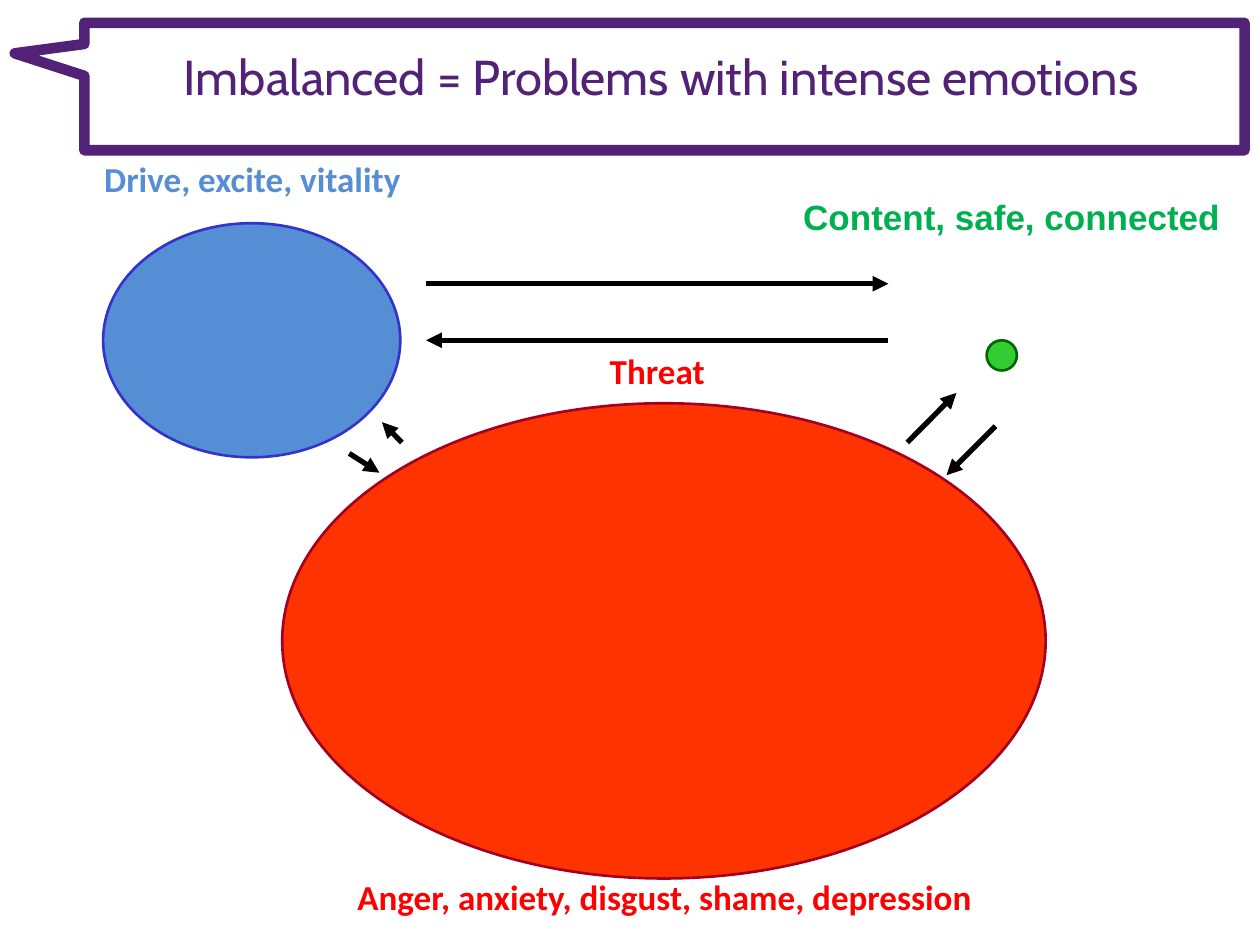
from lxml.etree import SubElement
from pptx import Presentation
from pptx.dml.color import RGBColor
from pptx.enum.shapes import MSO_CONNECTOR, MSO_SHAPE
from pptx.enum.text import MSO_ANCHOR, PP_ALIGN
from pptx.oxml.ns import qn
from pptx.util import Cm, Pt

PURPLE = RGBColor(0x51, 0x22, 0x75)
RED = RGBColor(0xFF, 0x00, 0x00)
RED_FILL = RGBColor(0xFF, 0x33, 0x00)
DARK_RED = RGBColor(0xA5, 0x00, 0x21)
BLUE = RGBColor(0x55, 0x8E, 0xD5)
DARK_BLUE = RGBColor(0x33, 0x33, 0xCC)
GREEN = RGBColor(0x00, 0xB0, 0x50)
GREEN_FILL = RGBColor(0x33, 0xCC, 0x33)
DARK_GREEN = RGBColor(0x00, 0x66, 0x00)
WHITE = RGBColor(0xFF, 0xFF, 0xFF)
BLACK = RGBColor(0x00, 0x00, 0x00)

prs = Presentation()
prs.slide_width, prs.slide_height = Cm(25.4), Cm(19.05)
s = prs.slides.add_slide(prs.slide_layouts[6])


def add_text(text, x, y, w, h, font, size, color, bold=False):
    sp = s.shapes.add_textbox(Cm(x), Cm(y), Cm(w), Cm(h))
    tf = sp.text_frame
    tf.word_wrap = True
    tf.text = text
    p = tf.paragraphs[0]
    p.alignment = PP_ALIGN.CENTER
    r = p.runs[0]
    r.font.name, r.font.size, r.font.bold = font, Pt(size), bold
    r.font.color.rgb = color
    return sp


# Title
title = add_text("Imbalanced = Problems with intense emotions",
                 1.5, -0.05, 23.65, 3.18, "Cabin", 28, PURPLE)
title.text_frame.vertical_anchor = MSO_ANCHOR.MIDDLE

# Labels of the three systems
for text, x, y, w, font, color in [
    ("Anger, anxiety, disgust, shame, depression", 6.2, 17.53, 14.4, "Calibri", RED),
    ("Drive, excite, vitality", 1.09, 3.05, 8, "Calibri", BLUE),
    ("Content, safe, connected", 15.39, 3.81, 10.01, "Arial", GREEN),
    ("Threat", 9.25, 6.93, 8, "Calibri", RED),
]:
    sp = add_text(text, x, y, w, 1.12, font, 20, color, bold=True)
    sp.fill.solid()
    sp.fill.fore_color.rgb = WHITE

# Circles, sized by the strength of each system
for x, y, w, h, fill, line in [
    (19.89, 6.86, 0.61, 0.61, GREEN_FILL, DARK_GREEN),
    (5.69, 8.13, 15.39, 9.58, RED_FILL, DARK_RED),
    (2.08, 4.5, 5.99, 4.72, BLUE, DARK_BLUE),
]:
    sp = s.shapes.add_shape(MSO_SHAPE.OVAL, Cm(x), Cm(y), Cm(w), Cm(h))
    sp.shadow.inherit = False
    sp.fill.solid()
    sp.fill.fore_color.rgb = fill
    sp.line.color.rgb = line
    sp.line.width = Pt(1.5)

# Arrows between the systems, in pairs
for x1, y1, x2, y2 in [
    (8.59, 5.72, 17.91, 5.72), (17.91, 6.86, 8.59, 6.86),
    (7.04, 9.14, 7.65, 9.53), (8.1, 8.92, 7.7, 8.51),
    (20.07, 8.59, 19.08, 9.58), (18.29, 8.92, 19.28, 7.92),
]:
    arrow = s.shapes.add_connector(MSO_CONNECTOR.STRAIGHT, Cm(x1), Cm(y1), Cm(x2), Cm(y2))
    arrow.line.color.rgb = BLACK
    arrow.line.width = Pt(3)
    SubElement(arrow.line._get_or_add_ln(), qn("a:tailEnd"), type="triangle")
    SubElement(arrow._element.spPr, qn("a:effectLst"))

# Callout frame around the title
callout = s.shapes.add_shape(MSO_SHAPE.RECTANGULAR_CALLOUT,
                             Cm(1.7), Cm(0.46), Cm(23.39), Cm(2.57))
callout.adjustments[0], callout.adjustments[1] = -0.56, -0.26
callout.shadow.inherit = False
callout.fill.background()
callout.line.color.rgb = PURPLE
callout.line.width = Pt(6)
SubElement(callout.line._get_or_add_ln(), qn("a:round"))

prs.save("out.pptx")
